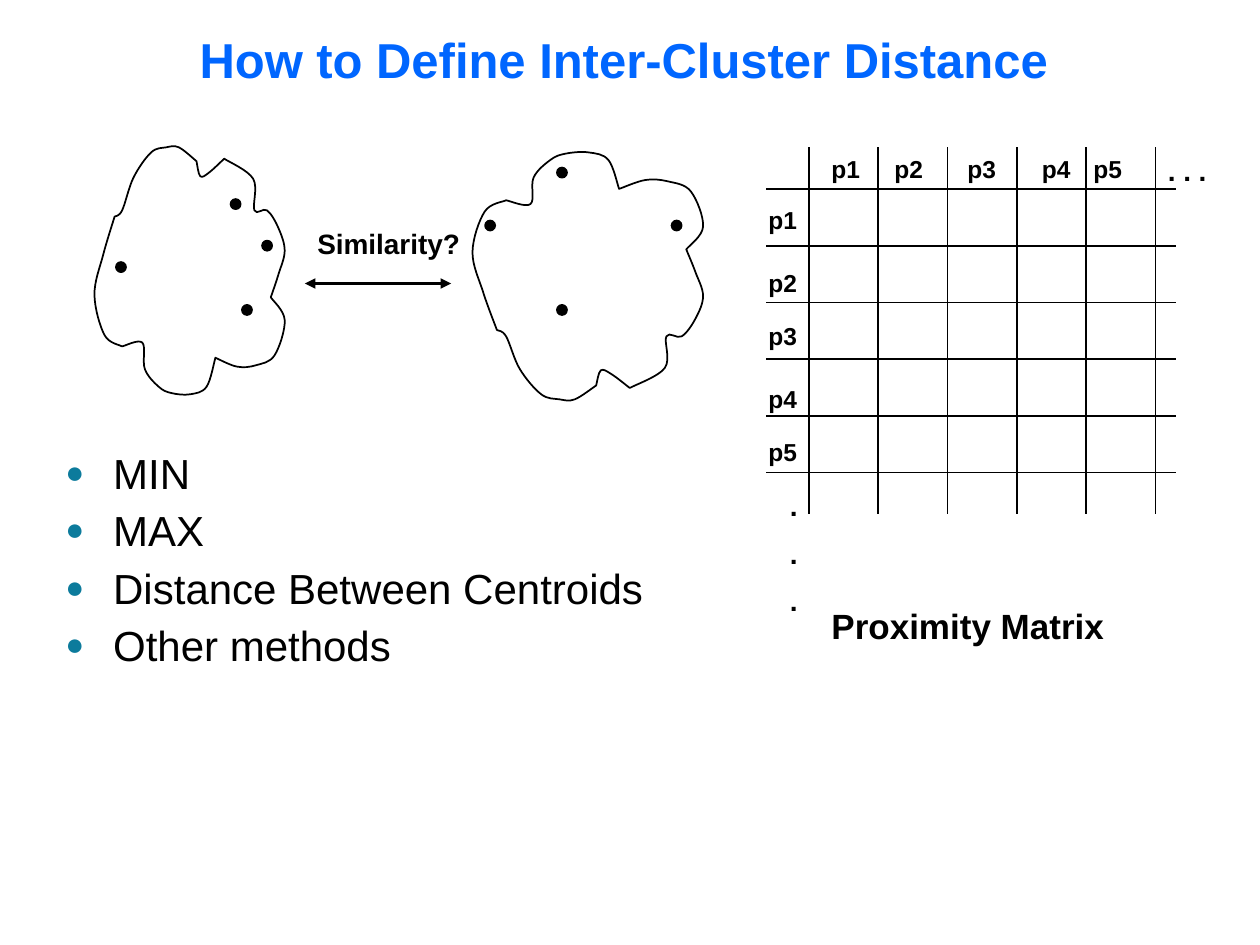
from itertools import chain
from pptx import Presentation
from pptx.dml.color import RGBColor
from pptx.enum.shapes import MSO_CONNECTOR, MSO_SHAPE
from pptx.enum.text import MSO_ANCHOR, PP_ALIGN
from pptx.oxml.ns import qn
from pptx.util import Inches, Pt
from lxml.etree import SubElement

BLUE = RGBColor(0x00, 0x66, 0xFF)
BLACK = RGBColor(0x00, 0x00, 0x00)
BULLET = RGBColor(0x0C, 0x7B, 0x9C)
FONT = "Arial"

TITLE = "How to Define Inter-Cluster Distance"
METHODS = ["MIN", "MAX", "Distance Between Centroids", "Other methods"]
POINTS = ["p1", "p2", "p3", "p4", "p5"]
COLUMN_LEFTS = [6.5, 7, 7.58, 8.17, 8.58]
ROW_TOPS = [1.58, 2.08, 2.5, 3, 3.42]
GRID_LEFT, GRID_RIGHT, GRID_TOP, GRID_BOTTOM = 6.08, 9.33, 1.17, 4.08
FIRST_COLUMN, COLUMN_GAP = 6.42, 0.55
FIRST_ROW, ROW_GAP = 1.5, 0.45
DOT = 0.08

BLOB_SIDES = {
    "left flank": [(0.16, 0.55), (0.07, 0.85), (0, 1.17), (0.08, 1.49), (0.22, 1.58)],
    "bottom bulge": [(0.22, 1.58), (0.38, 1.55), (0.4, 1.76), (0.51, 1.9),
                     (0.61, 1.95), (0.76, 1.96), (0.89, 1.9), (0.96, 1.67)],
    "lower right bulge": [(0.96, 1.67), (1.13, 1.74), (1.28, 1.73), (1.43, 1.65),
                          (1.51, 1.37), (1.4, 1.19)],
    "right bulge": [(1.4, 1.19), (1.46, 1.01), (1.51, 0.82), (1.46, 0.64),
                    (1.37, 0.5), (1.27, 0.5), (1.26, 0.25), (1.03, 0.09)],
    "top notch": [(1.03, 0.09), (0.91, 0.2), (0.84, 0.23), (0.81, 0.11)],
    "crown": [(0.81, 0.11), (0.67, 0), (0.57, 0), (0.45, 0.04),
              (0.31, 0.24), (0.22, 0.5), (0.16, 0.55)],
}
BLOB_WIDTH, BLOB_HEIGHT = 1.51, 1.96

CLUSTERS = [
    {"left": 0.75, "top": 1.17, "width": 1.51, "mirrored": False,
     "dots": [(1.92, 2.42), (1.83, 1.58), (0.92, 2.08), (2.08, 1.91)]},
    {"left": 3.75, "top": 1.21, "width": 1.83, "mirrored": True,
     "dots": [(5.33, 1.75), (3.85, 1.75), (4.42, 2.42), (4.42, 1.33)]},
]


def style(p, size, bold=True, color=BLACK):
    for r in p.runs:
        r.font.name, r.font.size, r.font.bold = FONT, Pt(size), bold
        r.font.color.rgb = color


def add_text(s, lines, box, size, bold=True, before=0, after=0):
    sp = s.shapes.add_textbox(*map(Inches, box))
    tf = sp.text_frame
    tf.word_wrap = True
    tf.text = "\n".join(lines)
    for p in tf.paragraphs:
        p.space_before, p.space_after = Pt(before), Pt(after)
        style(p, size, bold)
    return tf


def add_line(s, start, end, width=1):
    c = s.shapes.add_connector(MSO_CONNECTOR.STRAIGHT, *map(Inches, start + end))
    c.line.color.rgb = BLACK
    c.line.width = Pt(width)
    SubElement(c._element.spPr, qn("a:effectLst"))
    return c


def smooth_curves(points):
    padded = [points[0]] + points + [points[-1]]
    for before, start, end, after in zip(padded, padded[1:], padded[2:], padded[3:]):
        leave = tuple(a + (b - c) / 6 for a, b, c in zip(start, end, before))
        arrive = tuple(a - (b - c) / 6 for a, b, c in zip(end, after, start))
        yield leave, arrive, end


def bend_segments(sp):
    segments = list(sp._element.iter(qn("a:lnTo")))
    for trio in zip(*[iter(segments)] * 3):
        curve = trio[0].makeelement(qn("a:cubicBezTo"))
        trio[0].addprevious(curve)
        for segment in trio:
            curve.append(segment[0])
            segment.getparent().remove(segment)


def add_blob(s, left, top, width, mirrored):
    def place(point):
        x, y = point
        y = BLOB_HEIGHT - y if mirrored else y
        return Inches(left + x * width / BLOB_WIDTH), Inches(top + y)

    sides = list(BLOB_SIDES.values())
    curves = chain.from_iterable(map(smooth_curves, sides))
    builder = s.shapes.build_freeform(*place(sides[0][0]))
    builder.add_line_segments([place(pt) for pt in chain.from_iterable(curves)], close=True)
    sp = builder.convert_to_shape()
    bend_segments(sp)
    sp.fill.background()
    return sp


def add_dot(s, x, y):
    sp = s.shapes.add_shape(MSO_SHAPE.OVAL, *map(Inches, (x, y, DOT, DOT)))
    sp.fill.solid()
    sp.fill.fore_color.rgb = BLACK
    return sp


def add_cluster(s, dots, **blob):
    for sp in [add_blob(s, **blob)] + [add_dot(s, x, y) for x, y in dots]:
        sp.shadow.inherit = False
        sp.line.color.rgb = BLACK
        sp.line.width = Pt(1)


def add_bullet(p):
    pPr = p._p.get_or_add_pPr()
    pPr.set("marL", str(Inches(0.38)))
    pPr.set("indent", str(Inches(-0.38)))
    SubElement(SubElement(pPr, qn("a:buClr")), qn("a:srgbClr")).set("val", str(BULLET))
    SubElement(pPr, qn("a:buSzPct")).set("val", "75000")
    SubElement(pPr, qn("a:buFont")).set("typeface", FONT)
    SubElement(pPr, qn("a:buChar")).set("char", "●")


def add_title(s):
    title = s.shapes.title
    title.left, title.top, title.width, title.height = map(Inches, (0.42, 0.17, 9.06, 0.6))
    tf = title.text_frame
    tf.text = TITLE
    tf.vertical_anchor = MSO_ANCHOR.MIDDLE
    tf.paragraphs[0].alignment = PP_ALIGN.CENTER
    style(tf.paragraphs[0], 28, color=BLUE)


def add_matrix(s):
    for i in range(len(POINTS) + 1):
        x = FIRST_COLUMN + i * COLUMN_GAP
        y = FIRST_ROW + i * ROW_GAP
        add_line(s, (x, GRID_TOP), (x, GRID_BOTTOM))
        add_line(s, (GRID_LEFT, y), (GRID_RIGHT, y))
    for name, left, top in zip(POINTS, COLUMN_LEFTS, ROW_TOPS):
        add_text(s, [name], (left, GRID_TOP, 0.58, 0.33), 14)
        add_text(s, [name], (6, top, 0.58, 0.33), 14)
    add_text(s, [". . ."], (9.17, GRID_TOP, 0.58, 0.37), 16)
    add_text(s, ["."] * 3, (6.17, 3.83, 0.58, 1.17), 16, before=8)
    add_text(s, ["Proximity Matrix"], (6.5, 4.75, 2.75, 0.43), 20)


def add_similarity_arrow(s):
    arrow = add_line(s, (2.42, 2.25), (3.58, 2.25), 2)
    for end in ("a:headEnd", "a:tailEnd"):
        SubElement(arrow.line._get_or_add_ln(), qn(end)).set("type", "triangle")
    add_text(s, ["Similarity?"], (2.42, 1.75, 1.58, 0.37), 16)


def main():
    prs = Presentation()
    prs.slide_width, prs.slide_height = Inches(10), Inches(7.5)
    s = prs.slides.add_slide(prs.slide_layouts[5])
    add_title(s)
    add_matrix(s)
    add_similarity_arrow(s)
    for cluster in CLUSTERS:
        add_cluster(s, **cluster)
    methods = add_text(s, METHODS, (0.42, 3.5, 6.33, 3.42), 24, False, 2, 2)
    for p in methods.paragraphs:
        add_bullet(p)
    prs.save("out.pptx")


if __name__ == "__main__":
    main()
